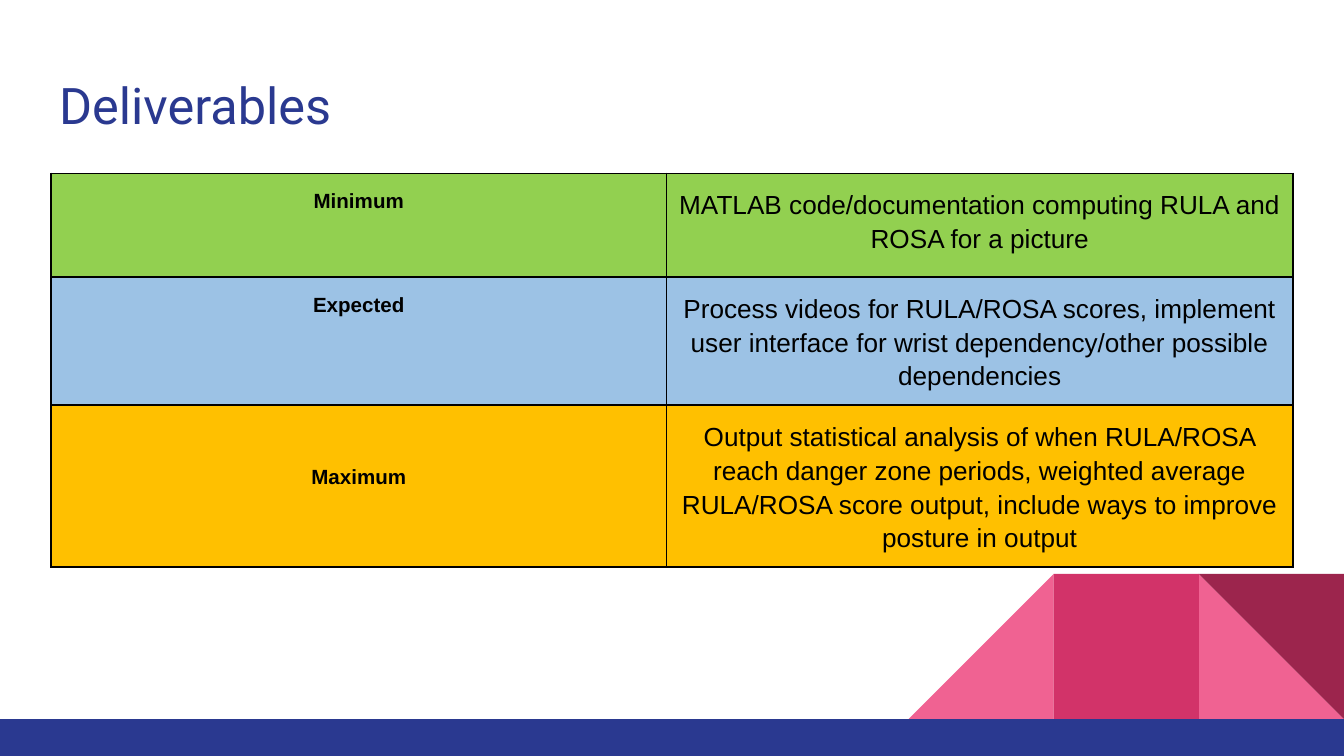
"""Build the Deliverables slide with its three-level table."""
from pptx import Presentation
from pptx.dml.color import RGBColor
from pptx.enum.shapes import MSO_SHAPE as Shape
from pptx.enum.text import MSO_ANCHOR as Anchor, PP_ALIGN as Align
from pptx.oxml import parse_xml
from pptx.oxml.ns import nsdecls
from pptx.util import Inches, Pt

BLACK = RGBColor(0x00, 0x00, 0x00)
NAVY = RGBColor(0x2A, 0x39, 0x90)
PINK = RGBColor(0xF0, 0x62, 0x92)
ROSE = RGBColor(0xD2, 0x33, 0x69)
WINE = RGBColor(0x9C, 0x25, 0x4D)
GREEN = RGBColor(0x92, 0xD0, 0x50)
BLUE = RGBColor(0x9C, 0xC2, 0xE5)
AMBER = RGBColor(0xFF, 0xC0, 0x00)

WIDTH = 10
HEIGHT = WIDTH * 9 / 16
TILE, TILE_TOP, BAR_TOP = 1.08, 4.27, 5.35
COLUMNS = (4.58, 4.66)
LEVELS = (
    ("Minimum", "MATLAB code/documentation computing RULA and ROSA for a picture",
     GREEN, 0.77, 0.1),
    ("Expected", "Process videos for RULA/ROSA scores, implement user interface for "
     "wrist dependency/other possible dependencies", BLUE, 0.95, 0.1),
    ("Maximum", "Output statistical analysis of when RULA/ROSA reach danger zone periods, "
     "weighted average RULA/ROSA score output, include ways to improve posture in output",
     AMBER, 1.12, 0.43),
)


class SlideBuilder:
    """Hold the fonts and the current page, and add each kind of element."""

    def __init__(self, page):
        self.page = page
        self.title_font = "Roboto"
        self.body_font = "Arial"

    def style_run(self, span, font, size, color, bold=False):
        span.font.name = font
        span.font.size = Pt(size)
        span.font.color.rgb = color
        span.font.bold = bold

    def title(self, text, left, top, width, height):
        box = self.page.shapes.title
        box.left, box.top = Inches(left), Inches(top)
        box.width, box.height = Inches(width), Inches(height)
        frame = box.text_frame
        frame.text = text
        frame.vertical_anchor = Anchor.MIDDLE
        frame.margin_left = frame.margin_right = Inches(0.1)
        frame.margin_top = frame.margin_bottom = Inches(0.1)
        para = frame.paragraphs[0]
        para.alignment = Align.LEFT
        self.style_run(para.runs[0], self.title_font, 27, NAVY)

    def block(self, kind, left, top, width, height, color, rotation=0):
        shape = self.page.shapes.add_shape(
            kind, Inches(left), Inches(top), Inches(width), Inches(height))
        shape.rotation = rotation
        shape.shadow.inherit = False
        shape.fill.solid()
        shape.fill.fore_color.rgb = color
        shape.line.fill.background()

    def cell(self, cell, text, size, bold, color, margin_top=0.1):
        cell.text_frame.text = text
        cell.vertical_anchor = Anchor.TOP
        cell.margin_left = cell.margin_right = Inches(0.07)
        cell.margin_top, cell.margin_bottom = Inches(margin_top), Inches(0.1)
        para = cell.text_frame.paragraphs[0]
        para.alignment = Align.CENTER
        para.line_spacing = 1.15
        para.space_before = Pt(12)
        self.style_run(para.runs[0], self.body_font, size, BLACK, bold)
        properties = cell._tc.get_or_add_tcPr()
        for side in "LRTB":
            properties.append(parse_xml(
                f'<a:ln{side} {nsdecls("a")} w="{Pt(1)}"><a:solidFill>'
                f'<a:srgbClr val="{BLACK}"/></a:solidFill></a:ln{side}>'))
        cell.fill.solid()
        cell.fill.fore_color.rgb = color

    def table(self, levels, left, top):
        height = sum(level[3] for level in levels)
        table = self.page.shapes.add_table(
            len(levels), len(COLUMNS), Inches(left), Inches(top),
            Inches(sum(COLUMNS)), Inches(height)).table
        for column, width in zip(table.columns, COLUMNS):
            column.width = Inches(width)
        for row, (name, detail, color, row_height, margin_top) in zip(table.rows, levels):
            row.height = Inches(row_height)
            self.cell(row.cells[0], name, 11, True, color, margin_top)
            self.cell(row.cells[1], detail, 14, False, color)


def main():
    deck = Presentation()
    deck.slide_width, deck.slide_height = Inches(WIDTH), Inches(HEIGHT)
    builder = SlideBuilder(deck.slides.add_slide(deck.slide_layouts[5]))
    tiles = (
        (1, Shape.RIGHT_TRIANGLE, PINK, 0),
        (3, Shape.RIGHT_TRIANGLE, PINK, 270),
        (2, Shape.RECTANGLE, ROSE, 0),
        (1, Shape.RIGHT_TRIANGLE, WINE, 180),
    )
    for steps, kind, color, rotation in tiles:
        builder.block(kind, WIDTH - steps * TILE, TILE_TOP, TILE, TILE, color, rotation)
    builder.block(Shape.RECTANGLE, 0, BAR_TOP, WIDTH, HEIGHT - BAR_TOP, NAVY)
    builder.title("Deliverables", 0.34, 0.45, 9.32, 0.66)
    builder.table(LEVELS, 0.38, 1.29)
    deck.save("out.pptx")


if __name__ == "__main__":
    main()
